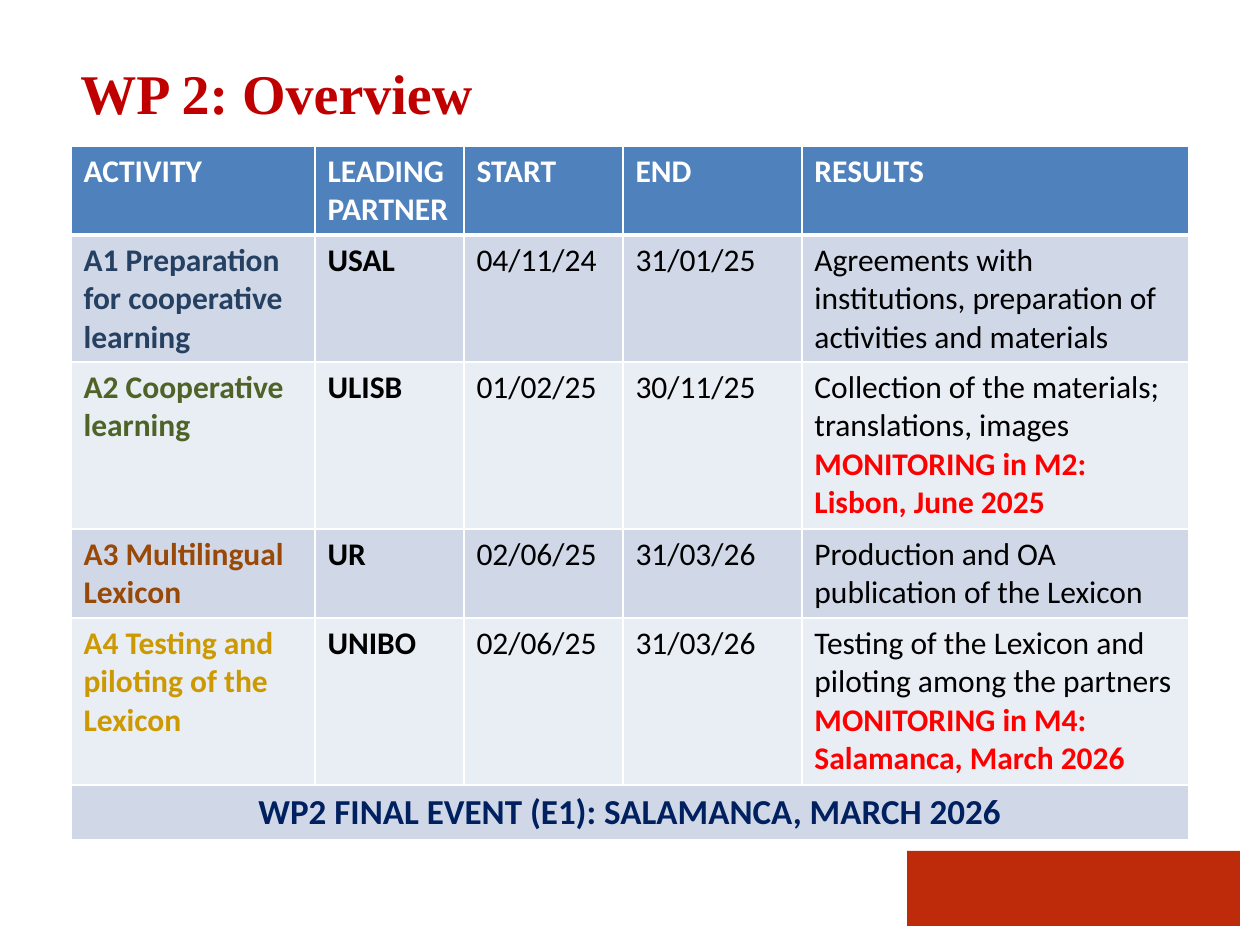
"""Build the WP 2 overview slide with its activity table."""
from lxml.etree import SubElement
from pptx import Presentation
from pptx.dml.color import RGBColor
from pptx.enum.shapes import MSO_SHAPE
from pptx.enum.text import MSO_ANCHOR, PP_ALIGN
from pptx.oxml.ns import qn
from pptx.util import Emu, Pt

WHITE = RGBColor(0xFF, 0xFF, 0xFF)
BLACK = RGBColor(0x00, 0x00, 0x00)
RED = RGBColor(0xFF, 0x00, 0x00)
TITLE_RED = RGBColor(0xC0, 0x00, 0x00)
BLOCK_RED = RGBColor(0xBD, 0x2B, 0x0B)
HEADER_BLUE = RGBColor(0x4F, 0x81, 0xBD)
BAND_DARK = RGBColor(0xD0, 0xD8, 0xE8)
BAND_LIGHT = RGBColor(0xE9, 0xED, 0xF4)
NAVY = RGBColor(0x25, 0x40, 0x61)
GREEN = RGBColor(0x4F, 0x62, 0x28)
BROWN = RGBColor(0x98, 0x48, 0x07)
GOLD = RGBColor(0xCC, 0x99, 0x00)
EVENT_BLUE = RGBColor(0x00, 0x20, 0x60)

PX = 914400 / 126
COLUMN_WIDTHS = [244, 149, 159, 179, 387]
ROW_HEIGHTS = [89, 127, 167, 89, 167, 55]
HEADERS = ["ACTIVITY", "LEADING PARTNER", "START", "END", "RESULTS"]
ACTIVITIES = [
    (NAVY, ["A1 Preparation for cooperative learning"], "USAL", "04/11/24", "31/01/25",
     "Agreements with institutions, preparation of activities and materials", None),
    (GREEN, ["A2 Cooperative", "learning"], "ULISB", "01/02/25", "30/11/25",
     "Collection of the materials; translations, images",
     "MONITORING in M2: Lisbon, June 2025"),
    (BROWN, ["A3 Multilingual Lexicon"], "UR", "02/06/25", "31/03/26",
     "Production and OA publication of the Lexicon", None),
    (GOLD, ["A4 Testing and piloting of the Lexicon"], "UNIBO", "02/06/25", "31/03/26",
     "Testing of the Lexicon and piloting among the partners",
     "MONITORING in M4:\nSalamanca, March 2026"),
]


def write(paragraph, text, color, bold=True, size=18, font="Calibri"):
    for index, line in enumerate(text.split("\n")):
        if index:
            paragraph.add_line_break()
        run = paragraph.add_run()
        run.text = line
        run.font.name = font
        run.font.size = Pt(size)
        run.font.bold = bold
        run.font.color.rgb = color


def style_cell(cell, fill, top_width, bottom_width):
    properties = cell._tc.get_or_add_tcPr()
    widths = {"a:lnL": 1, "a:lnR": 1, "a:lnT": top_width, "a:lnB": bottom_width}
    for tag, width in widths.items():
        border = SubElement(properties, qn(tag), w=str(Pt(width)))
        SubElement(SubElement(border, qn("a:solidFill")), qn("a:srgbClr"), val=str(WHITE))
    cell.fill.solid()
    cell.fill.fore_color.rgb = fill


presentation = Presentation()
presentation.slide_width = Emu(round(1260 * PX))
presentation.slide_height = Emu(round(945 * PX))
slide = presentation.slides.add_slide(presentation.slide_layouts[6])

block = slide.shapes.add_shape(
    MSO_SHAPE.RECTANGLE, *[Emu(round(length * PX)) for length in (907, 851, 333, 75)])
block.shadow.inherit = False
block.fill.solid()
block.fill.fore_color.rgb = BLOCK_RED
block.line.fill.background()

title = slide.shapes.add_textbox(*[Emu(round(length * PX)) for length in (68, 45, 1086, 74)])
title.text_frame.word_wrap = True
title.text_frame.vertical_anchor = MSO_ANCHOR.TOP
title.text_frame.margin_top = Emu(round(14 * PX))
write(title.text_frame.paragraphs[0], "WP 2: Overview", TITLE_RED, size=32, font="Times New Roman")

table_box = [71, 146, sum(COLUMN_WIDTHS), sum(ROW_HEIGHTS)]
table = slide.shapes.add_table(
    len(ROW_HEIGHTS), len(COLUMN_WIDTHS),
    *[Emu(round(length * PX)) for length in table_box]).table
for column, width in zip(table.columns, COLUMN_WIDTHS):
    column.width = Emu(round(width * PX))
for index, (row, height) in enumerate(zip(table.rows, ROW_HEIGHTS)):
    row.height = Emu(round(height * PX))
    fill = HEADER_BLUE if index == 0 else BAND_DARK if index % 2 else BAND_LIGHT
    for cell in row.cells:
        style_cell(cell, fill, 3 if index == 1 else 1, 3 if index == 0 else 1)

for column, header in enumerate(HEADERS):
    write(table.cell(0, column).text_frame.paragraphs[0], header, WHITE)

for row, (color, activity, partner, start, end, result, monitoring) in enumerate(ACTIVITIES, 1):
    results = [(result, BLACK, False)]
    if monitoring:
        results.append((monitoring, RED, True))
    contents = [
        [(line, color, True) for line in activity],
        [(partner, BLACK, True)],
        [(start, BLACK, False)],
        [(end, BLACK, False)],
        results,
    ]
    for column, content in enumerate(contents):
        frame = table.cell(row, column).text_frame
        for index, (text, text_color, bold) in enumerate(content):
            paragraph = frame.add_paragraph() if index else frame.paragraphs[0]
            write(paragraph, text, text_color, bold)

event = table.cell(5, 0)
event.merge(table.cell(5, 4))
event_paragraph = event.text_frame.paragraphs[0]
event_paragraph.alignment = PP_ALIGN.CENTER
write(event_paragraph, "WP2 FINAL EVENT (E1): SALAMANCA, MARCH 2026", EVENT_BLUE, size=20)

presentation.save("out.pptx")
